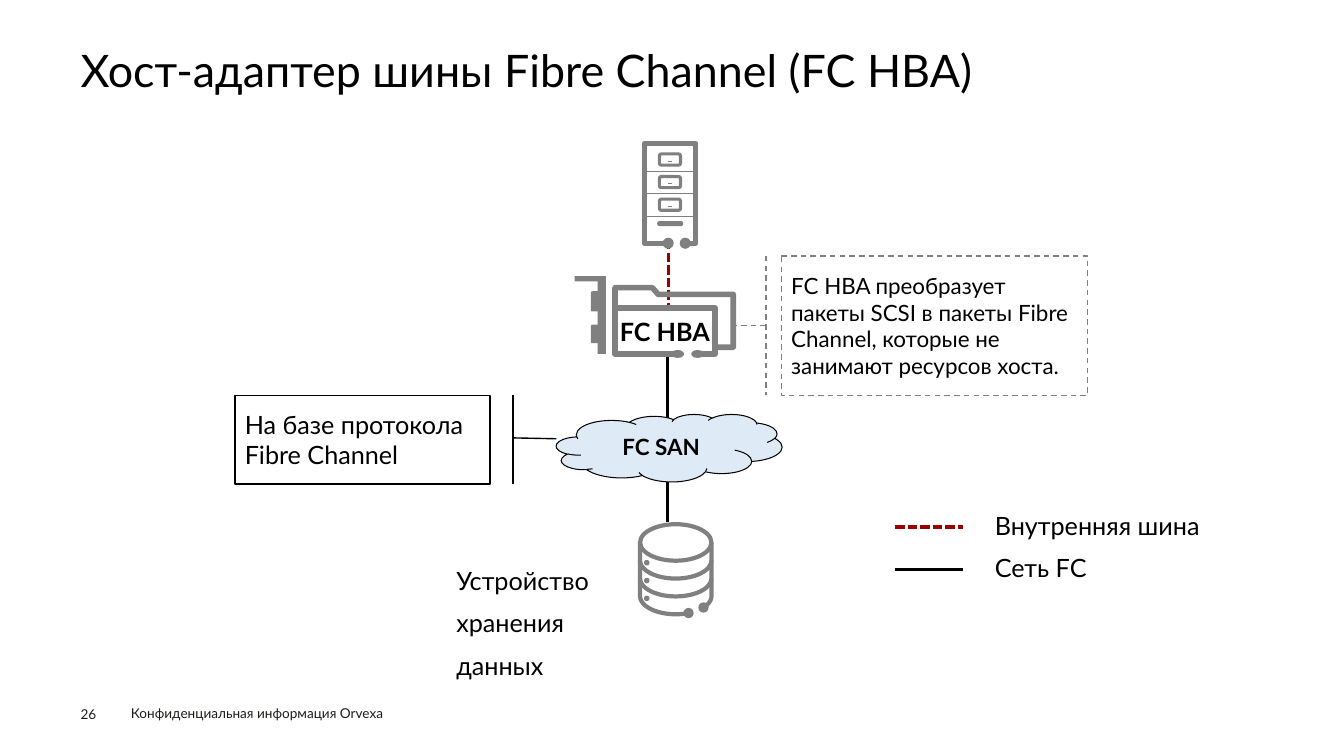
from math import cos, radians, sin

from lxml import etree
from pptx import Presentation
from pptx import util as u
from pptx.dml import color as dml_color
from pptx.enum import dml, shapes, text
from pptx.oxml import ns

FONT = "Lato"
BLACK, GREY, RED, SKY, INK = "000000", "808080", "990000", "DEEBF7", "1D1D1B"
FORMS, DASHES = shapes.MSO_SHAPE, dml.MSO_LINE


def colour(value):
    """Turn a hex string into a colour."""
    return dml_color.RGBColor.from_string(value)


def write(frame, content, size=18, ink=BLACK, bold=False, spacing=None, align=text.PP_ALIGN.LEFT,
          anchor=text.MSO_ANCHOR.TOP, inset=None):
    """Fill a text frame with one formatted paragraph."""
    frame.word_wrap = True
    frame.vertical_anchor = anchor
    if inset is not None:
        frame.margin_left = frame.margin_right = u.Cm(inset)
        frame.margin_top = frame.margin_bottom = u.Cm(inset)
    paragraph = frame.paragraphs[0]
    paragraph.alignment = align
    if spacing:
        paragraph.line_spacing = spacing
    run = paragraph.add_run()
    run.text = content
    run.font.name, run.font.size, run.font.bold = FONT, u.Pt(size), bold
    run.font.color.rgb = colour(ink)


def label(slide, box, content, **style):
    """Add a text box at a box in centimetres."""
    area = slide.shapes.add_textbox(*map(u.Cm, box))
    write(area.text_frame, content, **style)


def stroke(line, ink, width, dash=None):
    """Set the colour, width and dash of a line."""
    line.color.rgb = colour(ink)
    line.width = u.Pt(width)
    if dash:
        line.dash_style = dash


def paint(shape, fill=None, ink=None, width=1, dash=None):
    """Give a shape its fill and outline, without shadow."""
    shape.shadow.inherit = False
    if fill:
        shape.fill.solid()
        shape.fill.fore_color.rgb = colour(fill)
    else:
        shape.fill.background()
    if ink:
        stroke(shape.line, ink, width, dash)
    else:
        shape.line.fill.background()
    return shape


def form(slide, kind, box, **style):
    """Add a painted preset shape."""
    return paint(slide.shapes.add_shape(kind, *map(u.Cm, box)), **style)


def dot(slide, x, y, rx, ry=None):
    """Add a grey dot around a centre."""
    ry = ry or rx
    form(slide, FORMS.OVAL, (x - rx, y - ry, 2 * rx, 2 * ry), fill=GREY)


def outline(slide, left, top, points, closed=False, **style):
    """Draw a path whose points are offsets from a corner."""
    spots = [(u.Cm(left + x), u.Cm(top + y)) for x, y in points]
    builder = slide.shapes.build_freeform(*spots[0])
    builder.add_line_segments(spots[1:], close=closed)
    paint(builder.convert_to_shape(), **style)


def link(slide, x1, y1, x2, y2, ink=BLACK, width=2.25, dash=None):
    """Add a straight line without shadow."""
    wire = slide.shapes.add_connector(shapes.MSO_CONNECTOR.STRAIGHT, *map(u.Cm, (x1, y1, x2, y2)))
    stroke(wire.line, ink, width, dash)
    etree.SubElement(wire._element.spPr, ns.qn("a:effectLst"))


def heading(slide, box, content):
    """Place the title in its placeholder."""
    title = slide.shapes.title
    title.left, title.top, title.width, title.height = map(u.Cm, box)
    title.text_frame.auto_size = text.MSO_AUTO_SIZE.NONE
    write(title.text_frame, content, size=32, spacing=0.9, inset=0)


def footer(slide, box):
    """Place the page number and the confidentiality line."""
    left, top, width, height = box
    label(slide, (left + 1.02, top - 0.13, width - 1.02, height + 0.26),
          "Конфиденциальная информация Orvexa", size=9.7, ink=INK)
    label(slide, (left, top, 1.4, height), "26", size=9.7, ink=INK, inset=0)


def callout(slide, box, content, pointer, size, **style):
    """Place a callout with accent bar and pointer."""
    note = form(slide, FORMS.LINE_CALLOUT_1_BORDER_AND_ACCENT_BAR, box, **style)
    for index, value in enumerate(pointer):
        note.adjustments[index] = value
    write(note.text_frame, content, size=size, anchor=text.MSO_ANCHOR.MIDDLE)


def legend(slide, box):
    """Place the key to the two line types."""
    left, top, width, height = box
    kinds = [("Внутренняя шина", RED, DASHES.SQUARE_DOT), ("Сеть FC", BLACK, None)]
    for row, (name, ink, dash) in enumerate(kinds):
        y = top + row * 1.07
        link(slide, left, y + 0.86, left + 1.7, y + 0.86, ink=ink, dash=dash)
        label(slide, (left + 2.26, y, width - 2.26, height / 2), name, spacing=1.4)


def server(slide, box):
    """Draw the host with its three drawers."""
    left, top, width, height = box
    right, base = width - 0.06, height - 0.07
    outline(slide, left, top, [(0.61, base), (0.06, base), (0.06, 0.06), (right, 0.06),
                               (right, base), (1.07, base)], ink=GREY, width=3.6)
    for row in range(3):
        y = top + row * 0.57
        drawer = (left + 0.44, y + 0.32, 0.53, 0.28)
        form(slide, FORMS.ROUNDED_RECTANGLE, drawer, ink=GREY, width=2.2)
        link(slide, left + 0.66, y + 0.5, left + 0.76, y + 0.5, ink=GREY, width=0.75)
        link(slide, left + 0.08, y + 0.75, left + right, y + 0.75, ink=GREY, width=0.75)
    slot = form(slide, FORMS.ROUNDED_RECTANGLE, (left + 0.38, top + 2.01, 0.66, 0.13), fill=GREY)
    slot.adjustments[0] = 0.5
    for x in (0.66, 1.09):
        dot(slide, left + x, top + base, 0.14)


def adapter(slide, box):
    """Draw the FC HBA card with its bracket."""
    left, top, width, height = box
    base, edge = height - 0.1, width - 0.09
    outline(slide, left, top, [(0, 0), (0.79, 0), (0.79, base), (0.58, base), (0.58, 0.13), (0, 0.13)],
            closed=True, fill=GREY)
    for y, depth in ((0.38, 0.51), (1.22, 0.47)):
        form(slide, FORMS.ROUNDED_RECTANGLE, (left + 0.41, top + y, 0.28, depth), fill=GREY)
    outline(slide, left, top, [(1.02, 0.8), (1.02, 0.29), (1.96, 0.29), (2.11, 0.46), (edge, 0.46),
                               (edge, 1.79), (3.56, 1.79)], ink=GREY, width=4)
    outline(slide, left, top, [(2.67, base), (1.02, base), (1.02, 0.8), (3.54, 0.8), (3.54, base),
                               (3.02, base)], ink=GREY, width=4)
    for x in (2.6, 3.1):
        dot(slide, left + x, top + base, 0.16, 0.1)
    label(slide, (left + 0.89, top + 0.89, 3.2, 1.02), "FC HBA", bold=True)


def storage(slide, box):
    """Draw the stacked disks of the storage device."""
    left, top, width, height = box
    middle, rx, ry, step = width / 2, width / 2 - 0.05, 0.46, 0.45
    rim = 0.51
    floor = rim + 3 * step

    def arc(level, start, stop):
        """List points of a disk edge between two angles."""
        sign = 1 if stop > start else -1
        return [(middle + rx * cos(radians(a)), level + ry * sin(radians(a)))
                for a in range(start, stop + sign, sign * 3)]

    form(slide, FORMS.OVAL, (left + middle - rx, top + rim - ry, 2 * rx, 2 * ry), ink=GREY, width=3)
    paths = [arc(rim + row * step, 180, 0) for row in (1, 2)]
    paths.append([(middle - rx, rim)] + arc(floor, 180, 69))
    paths.append(arc(floor, 39, 0) + [(middle + rx, rim)])
    for points in paths:
        outline(slide, left, top, points, ink=GREY, width=3)
    for angle in (69, 39):
        x, y = arc(floor, angle, angle - 3)[0]
        dot(slide, left + x, top + y, 0.13)
    for row in range(3):
        dot(slide, left + 0.22, top + 1.02 + row * step, 0.07)


def network(slide, box):
    """Draw the path from the host through FC SAN to storage."""
    left, top, width, height = box
    link(slide, left + 2.36, top + 2.49, left + 2.36, top + 4.14, ink=RED, dash=DASHES.SQUARE_DOT)
    link(slide, left + 2.34, top + 5.43, left + 2.34, top + 9.6)
    cloud = form(slide, FORMS.CLOUD, (left - 0.46, top + 6.88, 5.69, 1.7), fill=SKY, ink=BLACK, width=0.75)
    write(cloud.text_frame, "FC SAN", size=16, bold=True, align=text.PP_ALIGN.CENTER,
          anchor=text.MSO_ANCHOR.MIDDLE)
    server(slide, (left + 1.7, top, 1.42, 2.64))
    storage(slide, (left + 1.6, top + 9.6, 1.9, 2.42))
    adapter(slide, (left, top + 3.4, width, 2.06))


def main():
    """Build the slide and save it."""
    deck = Presentation()
    deck.slide_width, deck.slide_height = u.Cm(33.87), u.Cm(19.05)
    slide = deck.slides.add_slide(deck.slide_layouts[5])
    heading(slide, (2.03, 1.24, 29.79, 1.37), "Хост-адаптер шины Fibre Channel (FC HBA)")
    callout(slide, (5.92, 9.96, 6.43, 2.24), "На базе протокола Fibre Channel",
            (0.48, 1.09, 0.49, 1.26), 18, ink=BLACK)
    callout(slide, (19.69, 6.45, 7.72, 3.51),
            "FC HBA преобразует пакеты SCSI в пакеты Fibre Channel, которые не занимают ресурсов хоста.",
            (0.5, -0.05, 0.5, -0.16), 16, ink=GREY, dash=DASHES.DASH)
    legend(slide, (22.56, 12.42, 8.53, 2.48))
    label(slide, (11.25, 13.82, 4.95, 1.24), "Устройство хранения данных", spacing=1.4)
    network(slide, (14.48, 3.56, 4.09, 12.02))
    footer(slide, (2.03, 17.78, 9.38, 0.41))
    deck.save("out.pptx")


if __name__ == "__main__":
    main()
